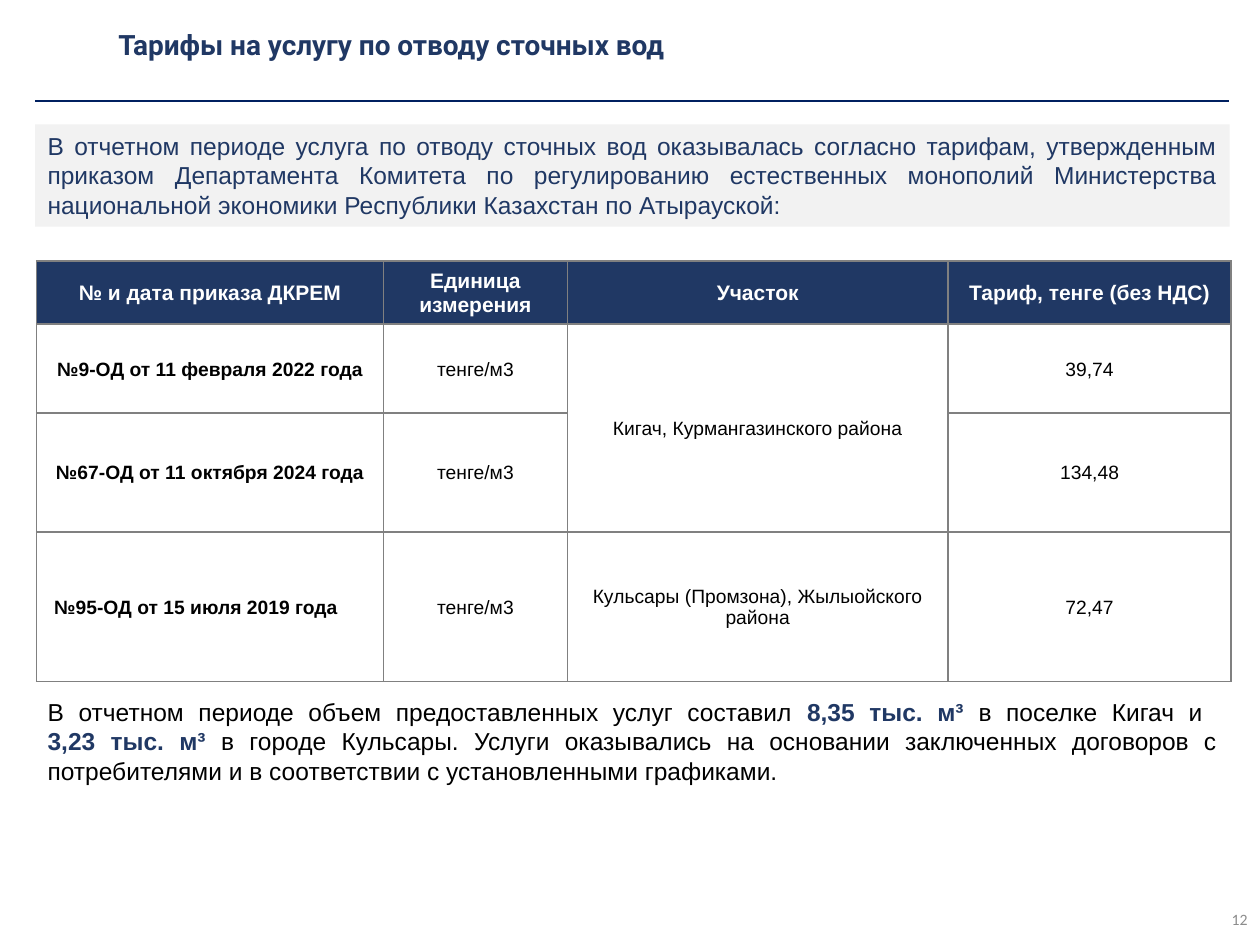
from collections import namedtuple

from lxml.etree import SubElement
from pptx import Presentation
from pptx.dml.color import RGBColor
from pptx.enum.shapes import MSO_CONNECTOR as Connector, MSO_SHAPE as Shape
from pptx.enum.text import MSO_ANCHOR as Anchor, MSO_AUTO_SIZE as AutoSize, PP_ALIGN as Align
from pptx.oxml.ns import qn
from pptx.util import Cm, Pt

Box = namedtuple("Box", "left top width height")

NAVY, BLACK, WHITE = "203864", "000000", "FFFFFF"
COLUMN_WIDTHS = [6.99, 3.71, 7.67, 5.71]
ROW_HEIGHTS = [1.27, 1.8, 2.39, 3.02]
TARIFFS = [
    ["№ и дата приказа ДКРЕМ", "Единица измерения", "Участок", "Тариф, тенге (без НДС)"],
    ["№9-ОД от 11 февраля 2022 года", "тенге/м3", "Кигач, Курмангазинского района", "39,74"],
    ["№67-ОД от 11 октября 2024 года", "тенге/м3", "", "134,48"],
    ["№95-ОД от 15 июля 2019 года", "тенге/м3", "Кульсары (Промзона), Жылыойского района", "72,47"],
]


def rgb(value):
    return RGBColor.from_string(value)


def lengths(box):
    return [Cm(value) for value in box]


def style(font, size, color, bold=False, name="Arial"):
    font.name, font.size, font.bold = name, Pt(size), bold
    font.color.rgb = rgb(color)


def place_heading(slide, box):
    heading = slide.shapes.title
    heading.left, heading.top, heading.width, heading.height = lengths(box)
    frame = heading.text_frame
    frame.text = "Тарифы на услугу по отводу сточных вод"
    frame.word_wrap = True
    frame.auto_size = AutoSize.NONE
    frame.vertical_anchor = Anchor.MIDDLE
    frame.paragraphs[0].alignment = Align.LEFT
    style(frame.paragraphs[0].runs[0].font, 16, NAVY, True, "Roboto")


def place_rule(slide, box):
    left, top, width, height = lengths(box)
    rule = slide.shapes.add_connector(Connector.STRAIGHT, left, top, left + width, top + height)
    rule.line.color.rgb = rgb("002060")
    rule.line.width = Pt(1)
    SubElement(rule._element.spPr, qn("a:effectLst"))


def place_intro(slide, box):
    intro = slide.shapes.add_shape(Shape.RECTANGLE, *lengths(box))
    intro.shadow.inherit = False
    intro.fill.solid()
    intro.fill.fore_color.rgb = rgb("F2F2F2")
    intro.line.fill.background()
    frame = intro.text_frame
    frame.text = (
        "В отчетном периоде услуга по отводу сточных вод оказывалась согласно тарифам, "
        "утвержденным приказом Департамента Комитета по регулированию естественных монополий "
        "Министерства национальной экономики Республики Казахстан по Атырауской:"
    )
    frame.word_wrap = True
    frame.vertical_anchor = Anchor.TOP
    frame.paragraphs[0].alignment = Align.JUSTIFY
    style(frame.paragraphs[0].runs[0].font, 14, NAVY)


def add_borders(cell):
    properties = cell._tc.get_or_add_tcPr()
    for side in ("lnL", "lnR", "lnT", "lnB"):
        border = SubElement(properties, qn(f"a:{side}"), w=str(Pt(1)))
        SubElement(SubElement(border, qn("a:solidFill")), qn("a:srgbClr"), val="808080")


def fill_cell(cell, text, is_header, is_bold):
    cell.text = text
    cell.vertical_anchor = Anchor.MIDDLE
    cell.margin_left = cell.margin_top = cell.margin_right = Cm(0.03)
    cell.margin_bottom = 0
    add_borders(cell)
    if is_header:
        cell.fill.solid()
        cell.fill.fore_color.rgb = rgb(NAVY)
    else:
        cell.fill.background()
    paragraph = cell.text_frame.paragraphs[0]
    paragraph.alignment = Align.CENTER
    for run in paragraph.runs:
        style(run.font, 12 if is_header else 11, WHITE if is_header else BLACK, is_bold)


def place_tariffs(slide, box):
    tariffs = slide.shapes.add_table(len(TARIFFS), len(COLUMN_WIDTHS), *lengths(box)).table
    for column, width in zip(tariffs.columns, COLUMN_WIDTHS):
        column.width = Cm(width)
    for row, height in zip(tariffs.rows, ROW_HEIGHTS):
        row.height = Cm(height)
    for r, texts in enumerate(TARIFFS):
        for c, text in enumerate(texts):
            fill_cell(tariffs.cell(r, c), text, r == 0, r == 0 or c == 0)
    tariffs.cell(1, 2).merge(tariffs.cell(2, 2))
    last_order = tariffs.cell(3, 0).text_frame.paragraphs[0]
    last_order.alignment = Align.JUSTIFY
    last_order._p.get_or_add_pPr().set("marL", str(Cm(0.32)))


def place_volumes(slide, box):
    frame = slide.shapes.add_textbox(*lengths(box)).text_frame
    frame.word_wrap = True
    paragraph = frame.paragraphs[0]
    paragraph.alignment = Align.JUSTIFY
    lines = [
        [("В отчетном периоде объем предоставленных услуг составил ", False),
         ("8,35 тыс. м³ ", True), ("в поселке Кигач и ", False)],
        [("3,23 тыс. м³ ", True),
         ("в городе Кульсары. Услуги оказывались на основании заключенных договоров с "
          "потребителями и в соответствии с установленными графиками.", False)],
    ]
    for number, line in enumerate(lines):
        if number:
            paragraph.add_line_break()
        for text, is_volume in line:
            run = paragraph.add_run()
            run.text = text
            style(run.font, 14, NAVY if is_volume else BLACK, is_volume)


def place_page_number(slide, box):
    frame = slide.shapes.add_textbox(*lengths(box)).text_frame
    frame.text = "12"
    frame.word_wrap = True
    frame.vertical_anchor = Anchor.MIDDLE
    frame.paragraphs[0].alignment = Align.RIGHT
    style(frame.paragraphs[0].runs[0].font, 9, "8C8C8C", name="Calibri")


def main():
    deck = Presentation()
    deck.slide_width, deck.slide_height = Cm(25.4), Cm(19.05)
    slide = deck.slides.add_slide(deck.slide_layouts[5])
    place_heading(slide, Box(2.13, 0.36, 22.68, 1.07))
    place_rule(slide, Box(0.71, 2.03, 24.06, 0))
    place_intro(slide, Box(0.71, 2.51, 24.08, 2.06))
    place_tariffs(slide, Box(0.74, 5.26, sum(COLUMN_WIDTHS), sum(ROW_HEIGHTS)))
    place_volumes(slide, Box(0.71, 13.92, 24.08, 2.06))
    place_page_number(slide, Box(19.69, 18.03, 5.71, 1.02))
    deck.save("out.pptx")


if __name__ == "__main__":
    main()
